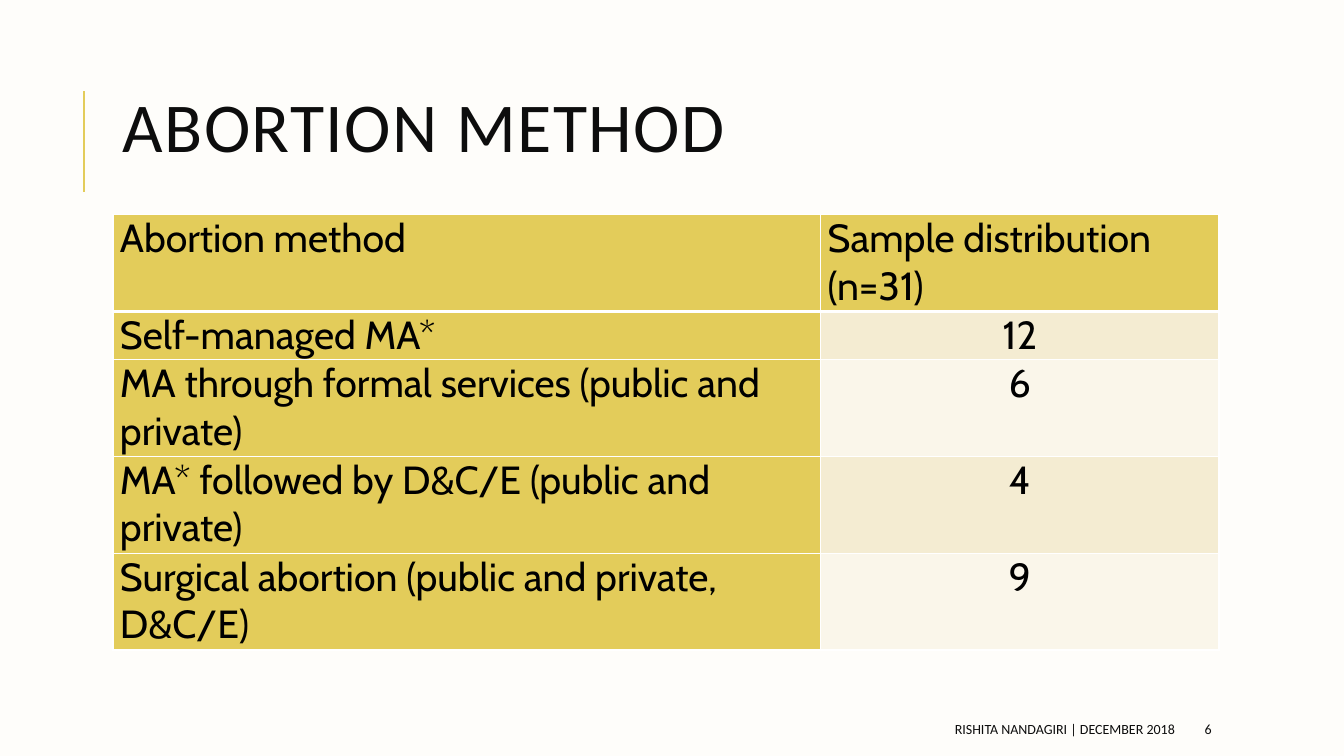
from lxml.etree import SubElement
from pptx import Presentation
from pptx.dml.color import RGBColor
from pptx.enum.shapes import MSO_CONNECTOR
from pptx.enum.text import MSO_ANCHOR, PP_ALIGN
from pptx.oxml import parse_xml
from pptx.oxml.ns import nsdecls, qn
from pptx.util import Inches, Pt

TITLE = "ABORTION METHOD"
CREDIT = "RISHITA NANDAGIRI | DECEMBER 2018"
PAGE = "6"
HEADER = ("Abortion method", "Sample distribution (n=31)")
METHODS = [
    ("Self-managed MA*", "12"),
    ("MA through formal services (public and private)", "6"),
    ("MA* followed by D&C/E (public and private)", "4"),
    ("Surgical abortion (public and private, D&C/E)", "9"),
]
COLUMN_WIDTHS = (7.02, 3.95)
ROW_HEIGHTS = (0.96, 0.48, 0.96, 0.96, 0.96)

PAPER = RGBColor(0xFE, 0xFD, 0xFA)
GOLD = RGBColor(0xE3, 0xCC, 0x5A)
BANDS = (RGBColor(0xFA, 0xF6, 0xEA), RGBColor(0xF4, 0xEC, 0xD2))
INK = RGBColor(0x0D, 0x0D, 0x0D)
BLACK = RGBColor(0, 0, 0)


def style_text(frame, size, font, color, align):
    paragraph = frame.paragraphs[0]
    paragraph.alignment = align
    run = paragraph.runs[0]
    run.font.size = Pt(size)
    run.font.name = font
    run.font.bold = False
    run.font.color.rgb = color
    return paragraph


def add_text(slide, text, box, size, align=PP_ALIGN.LEFT):
    frame = slide.shapes.add_textbox(*map(Inches, box)).text_frame
    frame.word_wrap = True
    frame.vertical_anchor = MSO_ANCHOR.MIDDLE
    frame.text = text
    return style_text(frame, size, "Calibri", INK, align)


def add_borders(cell, top, bottom):
    properties = cell._tc.get_or_add_tcPr()
    widths = (("lnL", 1), ("lnR", 1), ("lnT", top), ("lnB", bottom))
    for position, (side, width) in enumerate(widths):
        properties.insert(position, parse_xml(
            f'<a:{side} {nsdecls("a")} w="{Pt(width)}"><a:solidFill>'
            f'<a:srgbClr val="FFFFFF"/></a:solidFill></a:{side}>'))


def add_methods_table(slide):
    rows = [HEADER] + METHODS
    table = slide.shapes.add_table(
        len(rows), len(HEADER), Inches(1.12), Inches(2.13),
        Inches(sum(COLUMN_WIDTHS)), Inches(sum(ROW_HEIGHTS))).table
    for column, width in zip(table.columns, COLUMN_WIDTHS):
        column.width = Inches(width)
    for r, (row, height) in enumerate(zip(rows, ROW_HEIGHTS)):
        table.rows[r].height = Inches(height)
        for c, text in enumerate(row):
            cell = table.cell(r, c)
            cell.text = text
            cell.margin_left = cell.margin_right = Inches(0.07)
            cell.margin_top = cell.margin_bottom = 0
            is_count = r > 0 and c > 0
            cell.fill.solid()
            cell.fill.fore_color.rgb = BANDS[r % 2] if is_count else GOLD
            add_borders(cell, 3 if r == 1 else 1, 3 if r == 0 else 1)
            style_text(cell.text_frame, 28, "Cabin", BLACK,
                       PP_ALIGN.CENTER if is_count else PP_ALIGN.LEFT)


def main():
    deck = Presentation()
    deck.slide_width, deck.slide_height = Inches(13.33), Inches(7.5)
    slide = deck.slides.add_slide(deck.slide_layouts[6])
    slide.background.fill.solid()
    slide.background.fill.fore_color.rgb = PAPER

    accent = slide.shapes.add_connector(
        MSO_CONNECTOR.STRAIGHT, *map(Inches, (0.83, 1.9, 0.83, 0.9)))
    accent.line.color.rgb = GOLD
    accent.line.width = Pt(1.5)
    SubElement(accent._element.spPr, qn("a:effectLst"))

    heading = add_text(slide, TITLE, (1.12, 0.49, 10.63, 1.64), 50)
    heading.line_spacing = 0.8
    heading.runs[0].font._element.set("spc", "100")

    add_methods_table(slide)
    add_text(slide, CREDIT, (5.3, 7.08, 6.45, 0.3), 10, PP_ALIGN.RIGHT)
    add_text(slide, PAGE, (11.85, 7.08, 1.06, 0.3), 10)
    deck.save("out.pptx")


if __name__ == "__main__":
    main()
